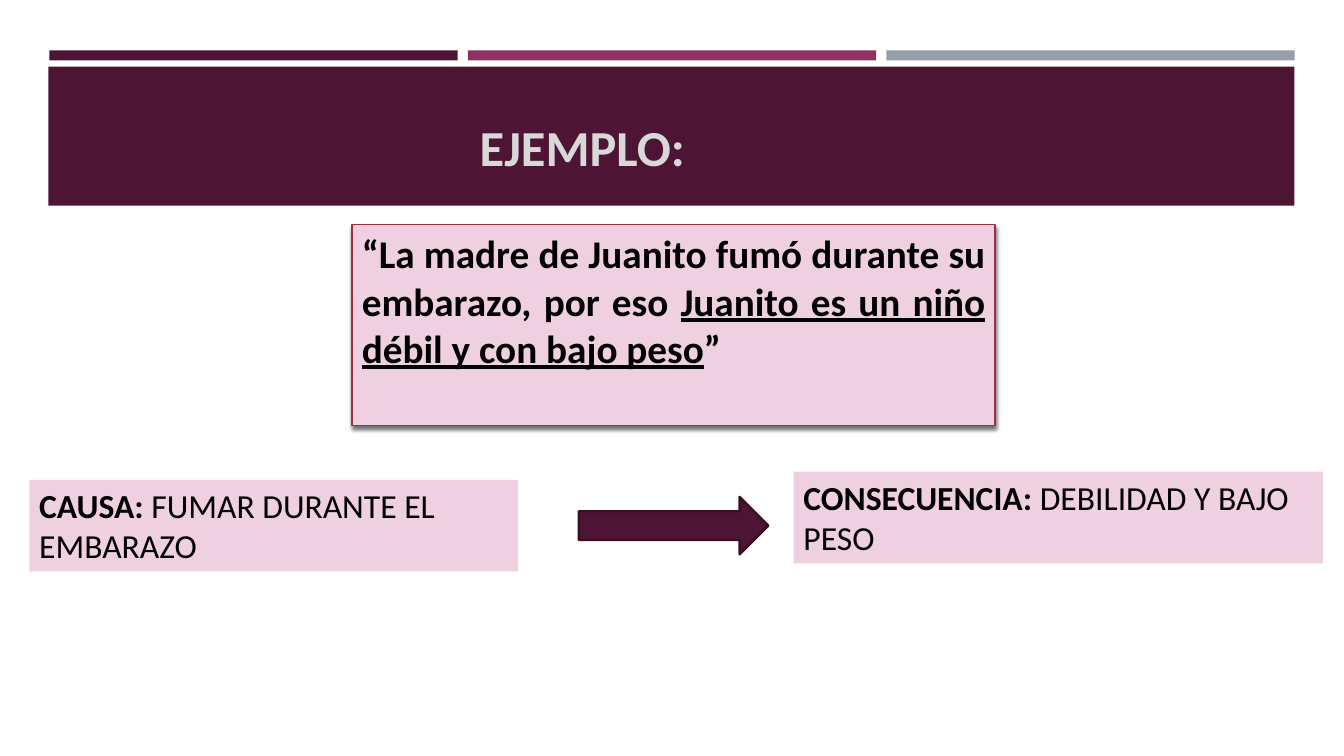
from dataclasses import dataclass

from lxml.etree import SubElement
from pptx import Presentation
from pptx.dml.color import RGBColor
from pptx.enum.shapes import MSO_SHAPE
from pptx.enum.text import MSO_ANCHOR, PP_ALIGN
from pptx.oxml.ns import qn
from pptx.util import Inches, Pt


@dataclass(frozen=True)
class Theme:
    font: str = "Calibri"
    plum: str = "4D1434"
    magenta: str = "903163"
    gray: str = "969FA7"
    pink: str = "EFD0E0"
    quote_border: str = "A02D44"
    arrow_border: str = "390F26"
    title_color: str = "D8D8D8"
    text_color: str = "000000"
    title_size: int = 36
    quote_size: int = 28
    label_size: int = 24


THEME = Theme()


def add_block(page, area, fill, border=None, border_width=1, kind=MSO_SHAPE.RECTANGLE):
    block = page.shapes.add_shape(kind, *map(Inches, area))
    block.shadow.inherit = False
    block.fill.solid()
    block.fill.fore_color.rgb = RGBColor.from_string(fill)
    if border:
        block.line.color.rgb = RGBColor.from_string(border)
        block.line.width = Pt(border_width)
    else:
        block.line.fill.background()
    return block


def write_text(box, spans, size, color=THEME.text_color,
               align=PP_ALIGN.LEFT, anchor=MSO_ANCHOR.TOP):
    """Fill the box with one paragraph of (text, bold, underline) spans."""
    frame = box.text_frame
    frame.word_wrap = True
    frame.vertical_anchor = anchor
    para = frame.paragraphs[0]
    para.alignment = align
    para.font.name = THEME.font
    para.font.size = Pt(size)
    para.font.color.rgb = RGBColor.from_string(color)
    for text, bold, underline in spans:
        span = para.add_run()
        span.text = text
        span.font.bold = bold
        span.font.underline = underline


def add_drop_shadow(block):
    effects = block._element.spPr.find(qn("a:effectLst"))
    shadow = SubElement(effects, qn("a:outerShdw"), blurRad=str(Pt(3)),
                        dist=str(Pt(2)), dir="5400000", rotWithShape="0")
    color = SubElement(shadow, qn("a:srgbClr"), val="000000")
    SubElement(color, qn("a:alpha"), val="55000")


def add_header(page):
    for column, color in enumerate((THEME.plum, THEME.magenta, THEME.gray)):
        add_block(page, (0.49 + column * 4.15, 0.5, 4.05, 0.1), color)
    add_block(page, (0.48, 0.66, 12.36, 1.38), THEME.plum)
    title = page.shapes.add_textbox(*map(Inches, (4.66, 0.93, 4.03, 0.87)))
    write_text(title, [("EJEMPLO:", True, False)], THEME.title_size,
               THEME.title_color, anchor=MSO_ANCHOR.BOTTOM)


def add_quote(page):
    quote = add_block(page, (3.49, 2.23, 6.38, 1.99), THEME.pink, THEME.quote_border)
    add_drop_shadow(quote)
    spans = [
        ("“La madre de Juanito fumó durante su embarazo, por eso ", True, False),
        ("Juanito es un niño débil y con bajo peso", True, True),
        ("”", True, False),
    ]
    write_text(quote, spans, THEME.quote_size, align=PP_ALIGN.JUSTIFY)


def add_label(page, area, heading, detail):
    label = add_block(page, area, THEME.pink)
    write_text(label, [(heading, True, False), (detail, False, False)], THEME.label_size)


def main():
    deck = Presentation()
    deck.slide_width, deck.slide_height = Inches(13.33), Inches(7.5)
    page = deck.slides.add_slide(deck.slide_layouts[6])

    # Header bars and title
    add_header(page)

    # Example sentence
    add_quote(page)

    # Cause leading to consequence
    add_label(page, (0.29, 4.76, 4.85, 0.91), "CAUSA: ", "FUMAR DURANTE EL EMBARAZO")
    add_label(page, (7.87, 4.68, 5.25, 0.91), "CONSECUENCIA: ", "DEBILIDAD Y BAJO PESO")
    add_block(page, (5.74, 4.93, 1.88, 0.57), THEME.plum, THEME.arrow_border, 1.75,
              MSO_SHAPE.RIGHT_ARROW)

    deck.save("out.pptx")


if __name__ == "__main__":
    main()
